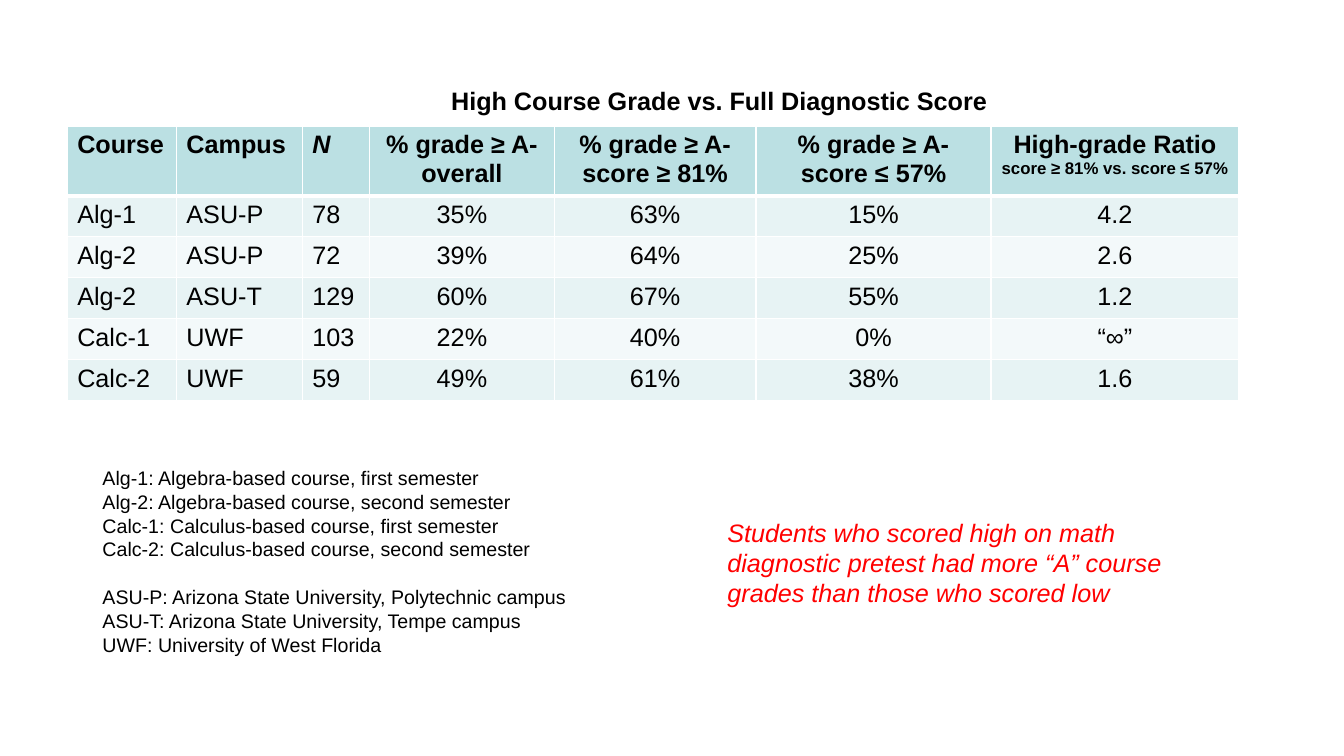
from lxml import etree
from pptx import Presentation
from pptx.dml.color import RGBColor
from pptx.enum.text import MSO_ANCHOR, MSO_AUTO_SIZE, PP_ALIGN
from pptx.oxml.ns import qn
from pptx.util import Pt

LEFT, CENTER = PP_ALIGN.LEFT, PP_ALIGN.CENTER
TOP, NO_AUTOFIT = MSO_ANCHOR.TOP, MSO_AUTO_SIZE.NONE

BLACK = RGBColor(0x00, 0x00, 0x00)
RED = RGBColor(0xFF, 0x00, 0x00)
WHITE = RGBColor(0xFF, 0xFF, 0xFF)
HEADER_FILL = RGBColor(0xBB, 0xE0, 0xE3)
BAND_FILLS = (RGBColor(0xE7, 0xF3, 0xF4), RGBColor(0xF3, 0xF9, 0xFA))

FONT = "Arial"
TITLE_AND_CONTENT = 1
COLUMN_WIDTHS = (78, 90, 48, 132, 144, 168, 177)
HEADER_HEIGHT, ROW_HEIGHT = 50, 29.25
FIRST_CENTERED = 3

HEADERS = (
    ("Course",),
    ("Campus",),
    ("N",),
    ("% grade ≥ A-", "overall"),
    ("% grade ≥ A-", "score ≥ 81%"),
    ("% grade ≥ A-", "score ≤ 57%"),
    ("High-grade Ratio",),
)
RATIO_NOTE = " score ≥ 81% vs. score ≤ 57%"
RESULTS = (
    ("Alg-1", "ASU-P", "78", "35%", "63%", "15%", "4.2"),
    ("Alg-2", "ASU-P", "72", "39%", "64%", "25%", "2.6"),
    ("Alg-2", "ASU-T", "129", "60%", "67%", "55%", "1.2"),
    ("Calc-1", "UWF", "103", "22%", "40%", "0%", "“∞”"),
    ("Calc-2", "UWF", "59", "49%", "61%", "38%", "1.6"),
)
COURSES = (
    "Alg-1: Algebra-based course, first semester",
    "Alg-2: Algebra-based course, second semester",
    "Calc-1: Calculus-based course, first semester",
    "Calc-2: Calculus-based course, second semester",
)
CAMPUSES = (
    "ASU-P: Arizona State University, Polytechnic campus",
    "ASU-T: Arizona State University, Tempe campus",
    "UWF: University of West Florida",
)


def write_text(p, text, size=18, color=BLACK, bold=False, italic=False, align=LEFT):
    p.alignment = align
    r = p.add_run()
    r.text = text
    font = r.font
    font.name, font.size, font.bold, font.italic = FONT, Pt(size), bold, italic
    font.color.rgb = color


def next_paragraph(tf, index):
    return tf.add_paragraph() if index else tf.paragraphs[0]


def place(sp, left, top, width, height):
    """Position a text shape and return its wrapped, top-anchored frame."""
    sp.left, sp.top, sp.width, sp.height = Pt(left), Pt(top), Pt(width), Pt(height)
    tf = sp.text_frame
    tf.word_wrap = True
    tf.auto_size = NO_AUTOFIT
    tf.vertical_anchor = TOP
    return tf


def remove_bullet(p):
    pPr = p._p.get_or_add_pPr()
    pPr.set("marL", "0")
    pPr.set("indent", "0")
    etree.SubElement(pPr, qn("a:buNone"))


def style_cell(cell, fill, top=1, bottom=1):
    """Draw white borders, with widths in points, and fill the cell."""
    tcPr = cell._tc.get_or_add_tcPr()
    for side, width in (("L", 1), ("R", 1), ("T", top), ("B", bottom)):
        ln = etree.SubElement(tcPr, qn(f"a:ln{side}"), w=str(Pt(width)))
        solid = etree.SubElement(ln, qn("a:solidFill"))
        etree.SubElement(solid, qn("a:srgbClr"), val=str(WHITE))
    cell.fill.solid()
    cell.fill.fore_color.rgb = fill


def column_align(col):
    return CENTER if col >= FIRST_CENTERED else LEFT


def add_results_table(s):
    frame = s.shapes.add_table(
        len(RESULTS) + 1, len(HEADERS), Pt(48), Pt(90),
        Pt(sum(COLUMN_WIDTHS)), Pt(HEADER_HEIGHT + ROW_HEIGHT * len(RESULTS)))
    table = frame.table
    for column, width in zip(table.columns, COLUMN_WIDTHS):
        column.width = Pt(width)
    for i, row in enumerate(table.rows):
        row.height = Pt(ROW_HEIGHT if i else HEADER_HEIGHT)

    for col, lines in enumerate(HEADERS):
        cell = table.cell(0, col)
        style_cell(cell, HEADER_FILL, bottom=3)
        for i, line in enumerate(lines):
            write_text(next_paragraph(cell.text_frame, i), line, bold=True,
                       italic=line == "N", align=column_align(col))
    ratio = table.cell(0, len(HEADERS) - 1).text_frame.paragraphs[0]
    write_text(ratio, RATIO_NOTE, size=12, bold=True, align=CENTER)

    for i, values in enumerate(RESULTS):
        for col, value in enumerate(values):
            cell = table.cell(i + 1, col)
            style_cell(cell, BAND_FILLS[i % 2], top=1 if i else 3)
            write_text(cell.text_frame.paragraphs[0], value, align=column_align(col))


def add_legend(sp):
    tf = place(sp, 66, 329, 450, 150)
    for i, line in enumerate(COURSES + CAMPUSES):
        p = next_paragraph(tf, i)
        write_text(p, line, size=14)
        p.line_spacing = Pt(17)
        p.space_before = Pt(17 if i == len(COURSES) else 0)
        remove_bullet(p)


def add_conclusion(s):
    tf = place(s.shapes.add_textbox(0, 0, 0, 0), 512.5, 366, 354, 73)
    p = tf.paragraphs[0]
    write_text(p, "Students who scored high on math diagnostic pretest had more "
               "“A” course grades than those who scored low", color=RED, italic=True)
    p.line_spacing = Pt(21.5)


def main():
    prs = Presentation()
    prs.slide_width, prs.slide_height = Pt(960), Pt(540)
    s = prs.slides.add_slide(prs.slide_layouts[TITLE_AND_CONTENT])
    title = place(s.shapes.title, 315, 57, 402, 29)
    write_text(title.paragraphs[0], "High Course Grade vs. Full Diagnostic Score", bold=True)
    add_results_table(s)
    add_legend(s.placeholders[1])
    add_conclusion(s)
    prs.save("out.pptx")


if __name__ == "__main__":
    main()
